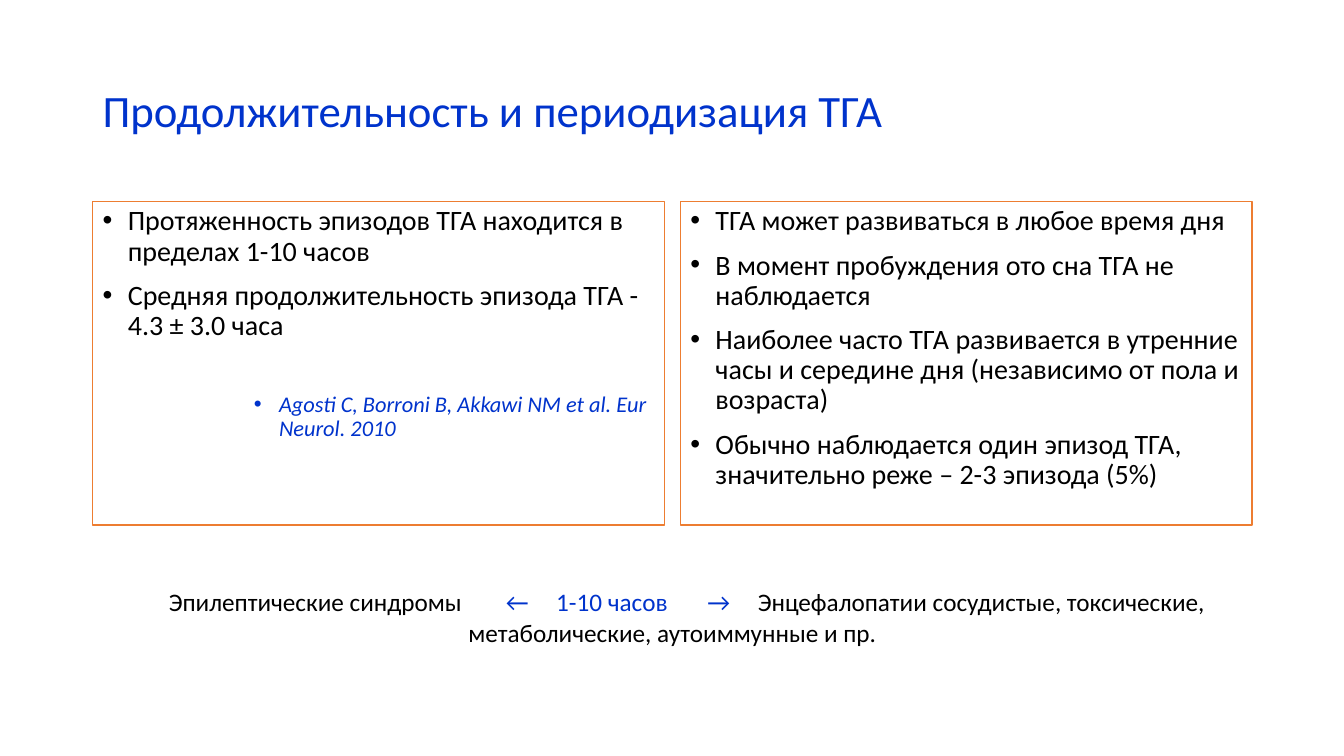
from lxml import etree
from pptx import Presentation
from pptx.dml.color import RGBColor
from pptx.enum import shapes, text
from pptx.oxml import ns
from pptx.util import Pt

BLUE = RGBColor(0x00, 0x33, 0xCC)
BLACK = RGBColor(0x00, 0x00, 0x00)
WHITE = RGBColor(0xFF, 0xFF, 0xFF)
ORANGE = RGBColor(0xED, 0x7D, 0x31)

LEFT, WIDTH = 66.24, 828
PANEL_GAP = 11.52
PANEL_WIDTH = (WIDTH - PANEL_GAP) / 2
BULLET_HANG = 18

DURATION = ["Протяженность эпизодов ТГА находится в пределах 1-10 часов",
            "Средняя продолжительность эпизода ТГА - 4.3 ± 3.0 часа"]
CITATION = "Agosti C, Borroni B, Akkawi NM et al. Eur Neurol. 2010"
TIMING = ["ТГА может развиваться в любое время дня",
          "В момент пробуждения ото сна ТГА не наблюдается",
          "Наиболее часто ТГА развивается в утренние часы и середине дня "
          "(независимо от пола и возраста)",
          "Обычно наблюдается один эпизод ТГА, значительно реже – 2-3 эпизода (5%)"]


def style(font, size, color, italic=None):
    font.name, font.size, font.italic = "Calibri", Pt(size), italic
    font.color.rgb = color


def add_text_box(slide, left, top, width, height):
    frame = slide.shapes.add_textbox(Pt(left), Pt(top), Pt(width), Pt(height)).text_frame
    frame.word_wrap = True
    return frame


def add_title(slide, left, top, width, height):
    frame = add_text_box(slide, left, top, width, height)
    frame.vertical_anchor = text.MSO_ANCHOR.MIDDLE
    frame.text = "Продолжительность и периодизация ТГА"
    title = frame.paragraphs[0]
    title.line_spacing = 0.9
    style(title.runs[0].font, 32, BLUE)


def set_bullet(paragraph, indent):
    props = paragraph._p.get_or_add_pPr()
    props.set("marL", str(Pt(indent)))
    props.set("indent", str(Pt(-BULLET_HANG)))
    etree.SubElement(props, ns.qn("a:buFont"), typeface="Arial")
    etree.SubElement(props, ns.qn("a:buChar"), char="•")


def add_panel(slide, left, top, width, height, points, citation=None):
    panel = slide.shapes.add_shape(shapes.MSO_SHAPE.RECTANGLE,
                                   Pt(left), Pt(top), Pt(width), Pt(height))
    panel.shadow.inherit = False
    panel.fill.solid()
    panel.fill.fore_color.rgb = WHITE
    panel.line.color.rgb = ORANGE
    panel.line.width = Pt(1)
    frame = panel.text_frame
    frame.word_wrap = True
    frame.vertical_anchor = text.MSO_ANCHOR.TOP
    frame.text = "\n".join(points + ([citation] if citation else []))
    for index, item in enumerate(frame.paragraphs):
        is_citation = index == len(points)
        item.alignment = text.PP_ALIGN.LEFT
        item.line_spacing = 0.9
        item.space_before = Pt(37 if is_citation else 10)
        set_bullet(item, 126 if is_citation else BULLET_HANG)
        if is_citation:
            item.level = 3
            style(item.runs[0].font, 16, BLUE, italic=True)
        else:
            style(item.runs[0].font, 20, BLACK)


def add_spectrum(slide, left, top, width, height):
    frame = add_text_box(slide, left, top, width, height)
    scale, ending = frame.paragraphs[0], frame.add_paragraph()

    # Tab stops separate the two groups of disorders from the time span
    props = scale._p.get_or_add_pPr()
    props.set("marL", "0")
    props.set("indent", str(Pt(47.3)))
    stops = etree.SubElement(props, ns.qn("a:tabLst"))
    for position in (285, 310, 397, 442):
        etree.SubElement(stops, ns.qn("a:tab"), pos=str(Pt(position)), algn="l")

    for words, color in (("Эпилептические синдромы\t", BLACK),
                         ("←\t1-10 часов\t→\t", BLUE),
                         ("Энцефалопатии сосудистые, токсические,", BLACK)):
        run = scale.add_run()
        run.text = words
        style(run.font, 18, color)

    ending.text = "метаболические, аутоиммунные и пр."
    ending.alignment = text.PP_ALIGN.CENTER
    style(ending.runs[0].font, 18, BLACK)


def main():
    deck = Presentation()
    deck.slide_width, deck.slide_height = Pt(960), Pt(540)
    slide = deck.slides.add_slide(deck.slide_layouts[6])
    add_title(slide, LEFT, 28.8, WIDTH, 104.4)
    # Two equal panels side by side
    add_panel(slide, LEFT, 144, PANEL_WIDTH, 231.12, DURATION, CITATION)
    add_panel(slide, LEFT + PANEL_WIDTH + PANEL_GAP, 144, PANEL_WIDTH, 231.12, TIMING)
    add_spectrum(slide, LEFT, 415.44, WIDTH, 51.12)
    deck.save("out.pptx")


if __name__ == "__main__":
    main()
